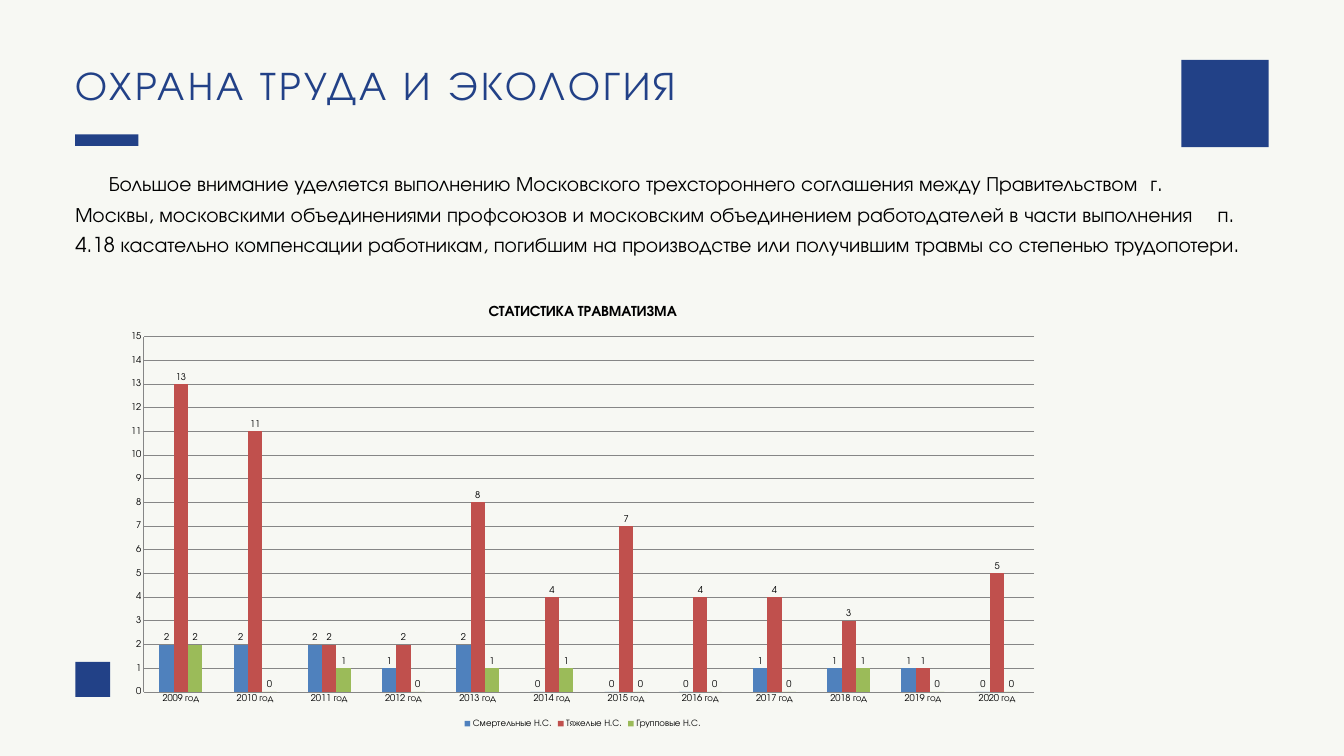
"""Build the slide on labour safety with its injury statistics chart."""
from dataclasses import dataclass

from lxml.etree import SubElement
from pptx import Presentation
from pptx.chart.data import CategoryChartData
from pptx.dml.color import RGBColor
from pptx.enum.chart import XL_CHART_TYPE, XL_LABEL_POSITION, XL_LEGEND_POSITION, XL_TICK_MARK
from pptx.enum.shapes import MSO_SHAPE
from pptx.enum.text import MSO_ANCHOR, MSO_AUTO_SIZE, PP_ALIGN
from pptx.oxml.ns import qn
from pptx.util import Inches, Pt


@dataclass(frozen=True)
class Theme:
    font: str = "TeX Gyre Adventor"
    paper: RGBColor = RGBColor(0xF7, 0xF8, 0xF3)
    navy: RGBColor = RGBColor(0x22, 0x41, 0x87)
    black: RGBColor = RGBColor(0, 0, 0)
    grid: RGBColor = RGBColor(0x86, 0x86, 0x86)
    title_size: Pt = Pt(43)
    body_size: Pt = Pt(22)
    chart_title_size: Pt = Pt(16)
    chart_size: Pt = Pt(10)


theme = Theme()


def write_text(box, text, position, size, color, leading, spacing=0, indent=0, tab=None):
    box.left, box.top, box.width, box.height = (Inches(value) for value in position)
    frame = box.text_frame
    frame.word_wrap = True
    frame.auto_size = MSO_AUTO_SIZE.NONE
    frame.vertical_anchor = MSO_ANCHOR.TOP
    frame.margin_left = frame.margin_top = frame.margin_right = frame.margin_bottom = 0
    para = frame.paragraphs[0]
    para.text = text
    properties = para._p.get_or_add_pPr()
    properties.set("marL", "0")
    properties.set("indent", str(Inches(indent)))
    SubElement(properties, qn("a:buNone"))
    if tab:
        tabs = SubElement(properties, qn("a:tabLst"))
        SubElement(tabs, qn("a:tab"), pos=str(Inches(tab)), algn="r")
    para.alignment = PP_ALIGN.LEFT
    para.line_spacing = leading
    para.space_before = Pt(0)
    for span in para.runs:
        span.font.name = theme.font
        span.font.size = size
        span.font.color.rgb = color
        span._r.get_or_add_rPr().set("spc", str(round(spacing * 100)))


deck = Presentation()
deck.slide_width, deck.slide_height = Inches(20), Inches(11.25)
page = deck.slides.add_slide(deck.slide_layouts[1])
page.background.fill.solid()
page.background.fill.fore_color.rgb = theme.paper

write_text(page.shapes.title, "ОХРАНА ТРУДА И ЭКОЛОГИЯ", (1.12, 0.9, 13.55, 0.69),
           theme.title_size, theme.navy, Pt(51.6), spacing=3.4)
write_text(
    page.placeholders[1],
    "Большое внимание уделяется выполнению Московского трехстороннего соглашения "
    "между Правительством\tг.\v"
    "Москвы, московскими объединениями профсоюзов и московским объединением "
    "работодателей в части выполнения\tп.\v"
    "4.18 касательно компенсации работникам, погибшим на производстве "
    "или получившим травмы со степенью трудопотери.",
    (1.12, 2.45, 17.75, 1.85), theme.body_size, theme.black, Pt(33), indent=0.5, tab=17.74)

for left, top, width, height in (
    (1.12, 9.85, 0.52, 0.52),
    (17.58, 0.89, 1.3, 1.3),
    (1.12, 2, 0.94, 0.17),
):
    block = page.shapes.add_shape(
        MSO_SHAPE.RECTANGLE, Inches(left), Inches(top), Inches(width), Inches(height))
    block.shadow.inherit = False
    block.fill.solid()
    block.fill.fore_color.rgb = theme.navy
    block.line.fill.background()

injuries = (
    ("Смертельные Н.С.", (2, 2, 2, 1, 2, 0, 0, 0, 1, 1, 1, 0), RGBColor(0x4F, 0x81, 0xBD)),
    ("Тяжелые Н.С.", (13, 11, 2, 2, 8, 4, 7, 4, 4, 3, 1, 5), RGBColor(0xC0, 0x50, 0x4D)),
    ("Групповые Н.С.", (2, 0, 1, 0, 1, 1, 0, 0, 0, 1, 0, 0), RGBColor(0x9B, 0xBB, 0x59)),
)
data = CategoryChartData()
data.categories = [f"{year} год" for year in range(2009, 2021)]
for name, values, color in injuries:
    data.add_series(name, values)
chart = page.shapes.add_chart(
    XL_CHART_TYPE.COLUMN_CLUSTERED, Inches(1.67), Inches(4.29), Inches(14), Inches(6.58), data).chart
chart.font.name = theme.font
chart.font.size = theme.chart_size
chart.font.color.rgb = theme.black

chart.has_title = True
chart.chart_title.include_in_layout = False
heading = chart.chart_title.text_frame
heading.text = "СТАТИСТИКА ТРАВМАТИЗМА"
span = heading.paragraphs[0].runs[0]
span.font.name = theme.font
span.font.size = theme.chart_title_size
span.font.bold = True
span.font.color.rgb = theme.black

chart.has_legend = True
chart.legend.position = XL_LEGEND_POSITION.BOTTOM
chart.legend.include_in_layout = False

scale = chart.value_axis
scale.minimum_scale, scale.maximum_scale, scale.major_unit = 0, 15, 1
scale.has_major_gridlines = True
for line in (scale.major_gridlines.format.line, scale.format.line, chart.category_axis.format.line):
    line.color.rgb = theme.grid
    line.width = Pt(0.75)
for axis in (scale, chart.category_axis):
    axis.major_tick_mark = axis.minor_tick_mark = XL_TICK_MARK.NONE

plot = chart.plots[0]
plot.gap_width, plot.overlap = 219, 0
plot.vary_by_categories = False
for series, (name, values, color) in zip(plot.series, injuries):
    series.format.fill.solid()
    series.format.fill.fore_color.rgb = color
    series.data_labels.show_value = True
    series.data_labels.position = XL_LABEL_POSITION.OUTSIDE_END

deck.save("out.pptx")
